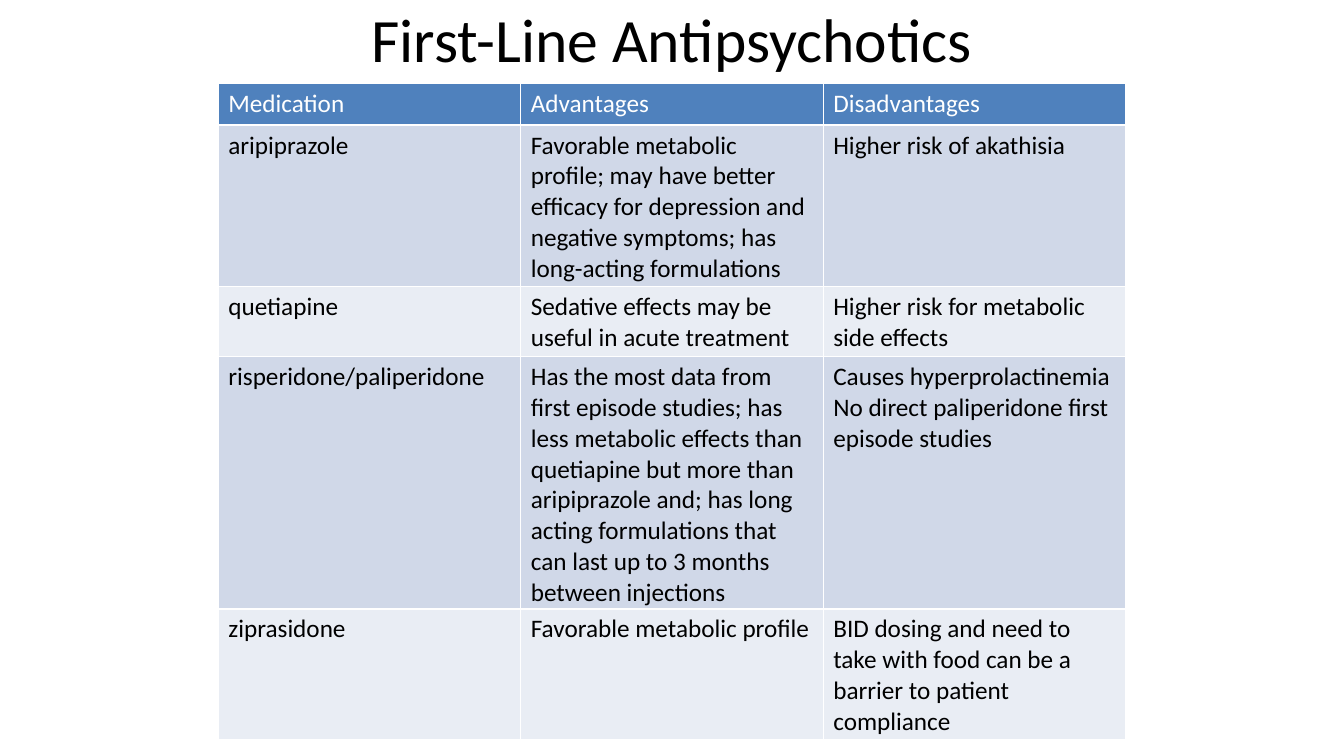
"""Builds a slide with a table of first-line antipsychotics."""
import pptx
import pptx.dml.color
import pptx.enum.text
import pptx.util

Inches = pptx.util.Inches


def paint(fill, shade):
    fill.solid()
    fill.fore_color.rgb = pptx.dml.color.RGBColor.from_string(shade)


def style(frame, size, shade):
    for para in frame.paragraphs:
        para.font.name = "Calibri"
        para.font.size = pptx.util.Pt(size)
        para.font.bold = False
        paint(para.font.fill, shade)


deck = pptx.Presentation()
deck.slide_width = Inches(13.33)
deck.slide_height = Inches(7.5)
slide = deck.slides.add_slide(deck.slide_layouts[6])

width = Inches(9)
left = (deck.slide_width - width) // 2

title = slide.shapes.add_textbox(left, Inches(-0.25), width, Inches(1.25)).text_frame
title.word_wrap = True
title.vertical_anchor = pptx.enum.text.MSO_ANCHOR.MIDDLE
title.text = "First-Line Antipsychotics"
title.paragraphs[0].alignment = pptx.enum.text.PP_ALIGN.CENTER
style(title, 44, "000000")

rows = [
    ("Medication", "Advantages", "Disadvantages"),
    ("aripiprazole",
     "Favorable metabolic profile; may have better efficacy for depression "
     "and negative symptoms; has long-acting formulations",
     "Higher risk of akathisia"),
    ("quetiapine",
     "Sedative effects may be useful in acute treatment",
     "Higher risk for metabolic side effects"),
    ("risperidone/paliperidone",
     "Has the most data from first episode studies; has less metabolic effects "
     "than quetiapine but more than aripiprazole and; has long acting "
     "formulations that can last up to 3 months between injections",
     "Causes hyperprolactinemia\nNo direct paliperidone first episode studies"),
    ("ziprasidone",
     "Favorable metabolic profile",
     "BID dosing and need to take with food can be a barrier to patient compliance"),
]
bands = ["E9EDF4", "D0D8E8"]

table = slide.shapes.add_table(
    len(rows), len(rows[0]), left, Inches(0.83), width, Inches(0.41) * len(rows)
).table
for r, row in enumerate(rows):
    for c, text in enumerate(row):
        cell = table.cell(r, c)
        cell.text = text
        paint(cell.fill, bands[r % 2] if r else "4F81BD")
        style(cell.text_frame, 18, "000000" if r else "FFFFFF")

deck.save("out.pptx")
